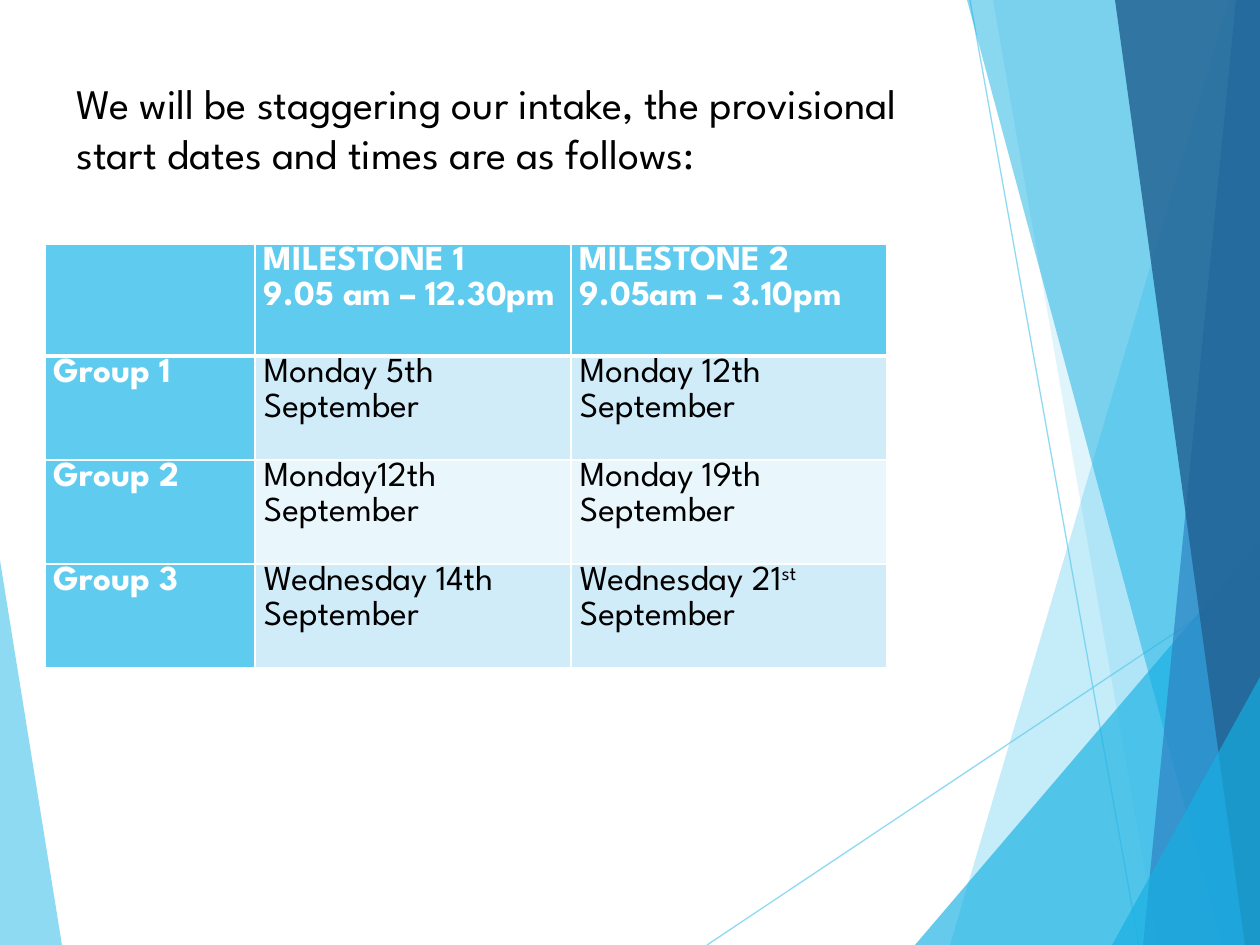
from lxml.etree import SubElement
from pptx import Presentation
from pptx.dml.color import RGBColor
from pptx.enum.shapes import MSO_CONNECTOR
from pptx.enum.text import MSO_ANCHOR, MSO_AUTO_SIZE, PP_ALIGN
from pptx.oxml.ns import qn
from pptx.util import Emu, Pt

PX = 914400 / 126
FONT = "League Spartan"
WHITE = RGBColor(0xFF, 0xFF, 0xFF)
BLACK = RGBColor(0, 0, 0)
SKY = RGBColor(0x5F, 0xCB, 0xEF)
CYAN = RGBColor(0x16, 0xB0, 0xE3)
BLUE = RGBColor(0x2E, 0x83, 0xC3)
NAVY = RGBColor(0x22, 0x62, 0x92)
BANDS = [RGBColor(0xD1, 0xEC, 0xF9), RGBColor(0xE9, 0xF6, 0xFC)]

INTRO = [
    "We will be staggering our intake, the provisional",
    "start dates and times are as follows:",
]
# Each cell is a list of paragraphs; a tuple holds text, superscript, text
SCHEDULE = [
    [[], ["MILESTONE 1", "9.05 am – 12.30pm"], ["MILESTONE 2", "9.05am – 3.10pm"]],
    [["Group 1"], ["Monday 5th September"], ["Monday 12th", "September"]],
    [["Group 2"], ["Monday12th September"], ["Monday 19th", "September"]],
    [["Group 3"], ["Wednesday 14th September"], [("Wednesday 21", "st", " September")]],
]
COLUMN_WIDTHS = [210, 316, 316]
ROW_HEIGHTS = [112, 104, 104, 104]

# Corner points in px, colour, opacity in percent, from back to front
LEFT_FACET = ([(0, 560), (62, 945), (0, 945)], SKY, 70)
RIGHT_FACETS = [
    ([(1229, 0), (950, 945), (1260, 945), (1260, 0)], SKY, 36),
    ([(993, 0), (1158, 945), (1260, 945), (1260, 0)], SKY, 20),
    ([(915, 945), (1260, 541), (1260, 945)], CYAN, 66),
    ([(967, 0), (1222, 945), (1260, 945), (1260, 0)], CYAN, 50),
    ([(1236, 0), (1143, 945), (1260, 945), (1260, 0)], BLUE, 70),
    ([(1115, 0), (1245, 945), (1260, 945), (1260, 0)], NAVY, 82),
    ([(1112, 945), (1260, 677), (1260, 945)], CYAN, 66),
]
RAYS = [(707, 945, 1260, 576), (970, 0, 1139, 945)]


def px(length):
    return Emu(round(length * PX))


def set_opacity(element, percent):
    color = next(element.iter(qn("a:srgbClr")))
    SubElement(color, qn("a:alpha"), val=str(percent * 1000))


def add_facet(slide, points, color, opacity):
    builder = slide.shapes.build_freeform(*points[0], scale=PX)
    builder.add_line_segments(points[1:], close=True)
    facet = builder.convert_to_shape()
    facet.shadow.inherit = False
    facet.fill.solid()
    facet.fill.fore_color.rgb = color
    facet.line.fill.background()
    set_opacity(facet.fill._xPr, opacity)


def add_ray(slide, ends):
    ray = slide.shapes.add_connector(MSO_CONNECTOR.STRAIGHT, *map(px, ends))
    ray.line.color.rgb = SKY
    ray.line.width = Pt(0.75)
    properties = ray._element.spPr
    set_opacity(properties, 70)
    SubElement(properties, qn("a:effectLst"))


def add_intro(slide):
    intro = slide.shapes.title
    intro.left, intro.top, intro.width, intro.height = map(px, (64, 71, 1003, 152))
    frame = intro.text_frame
    frame.text = "\n".join(INTRO)
    frame.word_wrap = True
    frame.auto_size = MSO_AUTO_SIZE.NONE
    frame.vertical_anchor = MSO_ANCHOR.TOP
    for paragraph in frame.paragraphs:
        paragraph.alignment = PP_ALIGN.LEFT
        style_font(paragraph.font, 24, BLACK, False)


def style_font(font, size, color, bold):
    font.name = FONT
    font.size = Pt(size)
    font.color.rgb = color
    font.bold = bold


def add_borders(cell, is_header):
    """Put white lines round a cell, with a thick one under the header."""
    properties = cell._tc.get_or_add_tcPr()
    for index, side in enumerate(("lnL", "lnR", "lnT", "lnB")):
        width = Pt(3) if is_header and side == "lnB" else Pt(1)
        line = properties.makeelement(qn(f"a:{side}"), {"w": str(width)})
        fill = SubElement(line, qn("a:solidFill"))
        SubElement(fill, qn("a:srgbClr"), val=str(WHITE))
        properties.insert(index, line)


def fill_cell(cell, lines, row, column):
    is_heading = row == 0 or column == 0
    cell.margin_left = cell.margin_right = px(9)
    cell.margin_top = cell.margin_bottom = 0
    cell.fill.solid()
    cell.fill.fore_color.rgb = SKY if is_heading else BANDS[(row - 1) % 2]
    add_borders(cell, row == 0)
    frame = cell.text_frame
    for index, line in enumerate(lines):
        paragraph = frame.add_paragraph() if index else frame.paragraphs[0]
        paragraph.line_spacing = 1.07
        style_font(paragraph.font, 20, WHITE if is_heading else BLACK, is_heading)
        parts = (line,) if isinstance(line, str) else line
        for position, text in enumerate(parts):
            run = paragraph.add_run()
            run.text = text
            if position == 1:
                run.font._element.set("baseline", "30000")


def add_schedule(slide):
    table = slide.shapes.add_table(
        len(SCHEDULE), len(COLUMN_WIDTHS), px(45), px(244),
        px(sum(COLUMN_WIDTHS)), px(sum(ROW_HEIGHTS)),
    ).table
    table.first_col = True
    for column, width in zip(table.columns, COLUMN_WIDTHS):
        column.width = px(width)
    for row, height in zip(table.rows, ROW_HEIGHTS):
        row.height = px(height)
    for row, cells in enumerate(SCHEDULE):
        for column, lines in enumerate(cells):
            fill_cell(table.cell(row, column), lines, row, column)


def main():
    deck = Presentation()
    deck.slide_width, deck.slide_height = px(1260), px(945)
    slide = deck.slides.add_slide(deck.slide_layouts[5])
    add_facet(slide, *LEFT_FACET)
    for ends in RAYS:
        add_ray(slide, ends)
    for facet in RIGHT_FACETS:
        add_facet(slide, *facet)
    add_schedule(slide)
    add_intro(slide)
    deck.save("out.pptx")


if __name__ == "__main__":
    main()
